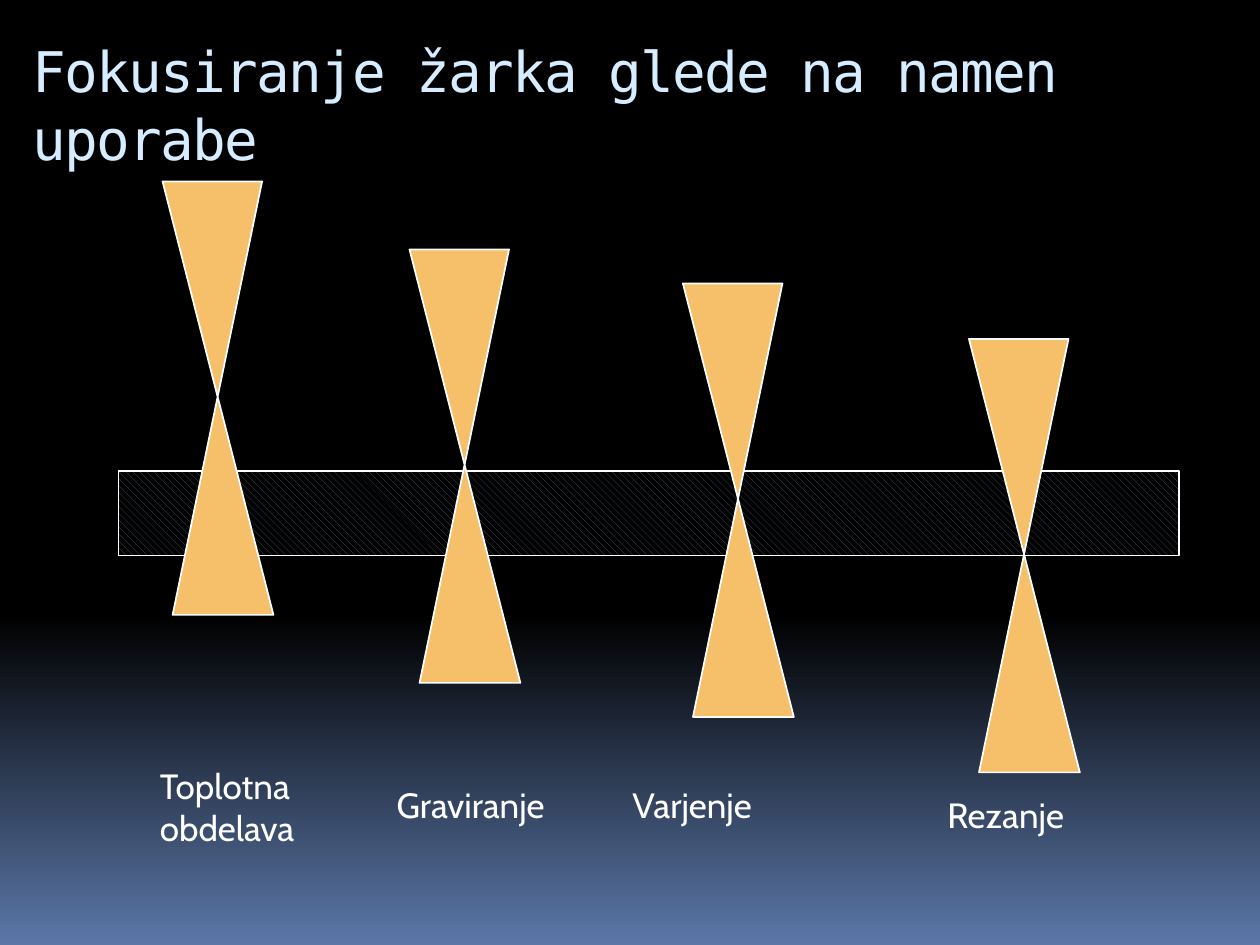
"""Build a slide showing how a laser beam is focused for four uses."""
from pptx import Presentation
from pptx.dml.color import RGBColor
from pptx.enum.dml import MSO_PATTERN
from pptx.enum.shapes import MSO_SHAPE
from pptx.enum.text import MSO_ANCHOR, MSO_AUTO_SIZE, PP_ALIGN
from pptx.util import Inches, Pt

COLORS = {
    "black": "000000",
    "blue": "5B77A8",
    "title": "D6ECFF",
    "hatch": "4E5B6F",
    "beam": "F6BF69",
    "white": "FFFFFF",
}


def rgb(name):
    return RGBColor.from_string(COLORS[name])


def add_run(p, text, size, font, color):
    r = p.add_run()
    r.text = text
    r.font.size = Pt(size)
    r.font.name = font
    r.font.color.rgb = rgb(color)
    return r


prs = Presentation()
prs.slide_width, prs.slide_height = Inches(10), Inches(7.5)
s = prs.slides.add_slide(prs.slide_layouts[5])

fill = s.background.fill
fill.gradient()
fill.gradient_angle = 270
for stop, (position, color) in zip(fill.gradient_stops, [(0.65, "black"), (1, "blue")]):
    stop.position = position
    stop.color.rgb = rgb(color)

title = s.shapes.title
title.left, title.top = Inches(0.16), Inches(0.16)
title.width, title.height = Inches(9.45), Inches(1.25)
tf = title.text_frame
tf.word_wrap = True
tf.auto_size = MSO_AUTO_SIZE.NONE
tf.vertical_anchor = MSO_ANCHOR.BOTTOM
p = tf.paragraphs[0]
p.alignment = PP_ALIGN.LEFT
r = add_run(p, "Fokusiranje žarka glede na namen uporabe", 32, "DejaVu Sans Mono", "title")
r.font._element.set("spc", "-100")

plate = s.shapes.add_shape(
    MSO_SHAPE.RECTANGLE, Inches(0.94), Inches(3.74), Inches(8.42), Inches(0.67)
)
plate.shadow.inherit = False
plate.fill.patterned()
plate.fill.pattern = MSO_PATTERN.WIDE_DOWNWARD_DIAGONAL
plate.fill.fore_color.rgb = rgb("hatch")
plate.fill.back_color.rgb = rgb("black")
plate.line.color.rgb = rgb("white")
plate.line.width = Pt(1)

uses = [
    ("Toplotna obdelava", 1.29, 1.44, 1.17, 6.02, 0.77),
    ("Graviranje", 3.25, 1.98, 3.05, 6.17, 0.44),
    ("Varjenje", 5.42, 2.25, 4.92, 6.17, 0.44),
    ("Rezanje", 7.69, 2.69, 7.42, 6.25, 0.44),
]
beam_outline = [(0.88, 3.44), (0.08, 3.44), (0.79, 0)]

for label, beam_x, beam_y, label_x, label_y, label_h in uses:
    builder = s.shapes.build_freeform(Inches(beam_x), Inches(beam_y))
    builder.add_line_segments(
        [(Inches(beam_x + dx), Inches(beam_y + dy)) for dx, dy in beam_outline], close=True
    )
    beam = builder.convert_to_shape()
    beam.shadow.inherit = False
    beam.fill.solid()
    beam.fill.fore_color.rgb = rgb("beam")
    beam.line.color.rgb = rgb("white")
    beam.line.width = Pt(1)

    box = s.shapes.add_textbox(Inches(label_x), Inches(label_y), Inches(1.56), Inches(label_h))
    tf = box.text_frame
    tf.word_wrap = True
    tf.auto_size = MSO_AUTO_SIZE.SHAPE_TO_FIT_TEXT
    add_run(tf.paragraphs[0], label, 20, "Cabin", "white")

prs.save("out.pptx")
